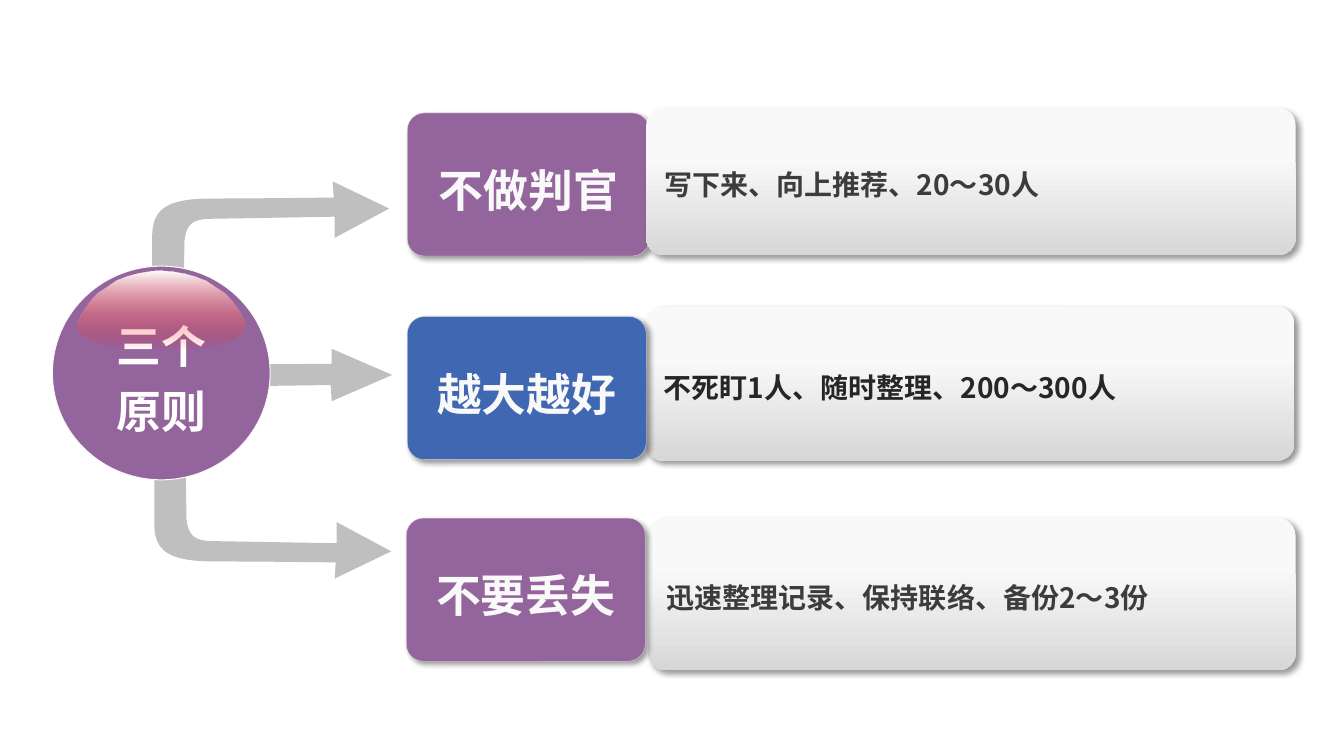
import pptx
import pptx.dml.color
import pptx.enum.shapes
import pptx.enum.text
import pptx.oxml
import pptx.oxml.ns
import pptx.util
from pptx.util import Inches

COLORS = {
    "purple": "94659C", "blue": "4067B2", "arrow": "BFBFBF", "light": "F9F9F9",
    "edge": "D7D7D7", "dark": "262626", "gray": "3C3C3C", "white": "FFFFFF", "red": "FF0000",
}
CJK_FONT = "Noto Sans CJK SC"
SHAPES = pptx.enum.shapes.MSO_SHAPE
ALIGN = pptx.enum.text.PP_ALIGN

# Outlines in inches from the left top of their box; six numbers make a curve.
BENT_ARROW = [
    (0.30, 1.82), (0.32, 0.59), (0.34, 0.37, 0.46, 0.37, 0.67, 0.37),
    (1.81, 0.35), (1.81, 0.56), (2.35, 0.27), (1.79, 0), (1.80, 0.16),
    (1.80, 0.16, 1.02, 0.17, 0.59, 0.17), (0.15, 0.17, 0.01, 0.27, 0, 0.52),
    (0, 1.84), (0.05, 2.06, 0.24, 2.03, 0.30, 1.82),
]
STRAIGHT_ARROW = [(0, 0.39), (2.18, 0.36), (2.19, 0.52), (2.79, 0.26),
                  (2.19, 0), (2.19, 0.15), (0, 0.16)]
# Right half of the gloss, from its top centre to its bottom.
GLOSS_HALF = [
    (0, 0), (0.12, 0.01), (0.23, 0.03), (0.34, 0.06), (0.44, 0.10), (0.53, 0.16),
    (0.62, 0.22), (0.69, 0.29), (0.75, 0.37), (0.80, 0.45), (0.83, 0.53), (0.83, 0.58),
    (0.80, 0.63), (0.72, 0.69), (0.60, 0.74), (0.46, 0.77), (0.30, 0.79), (0.16, 0.80),
]


def rgb(name):
    return pptx.dml.color.RGBColor.from_string(COLORS[name])


def fill_solid(shape, color):
    shape.fill.solid()
    shape.fill.fore_color.rgb = rgb(color)


def fill_gradient(shape, *stops):
    """Fill from top to bottom with two (position, color) stops."""
    shape.fill.gradient()
    shape.fill.gradient_angle = 270
    for stop, (position, color) in zip(shape.fill.gradient_stops, stops):
        stop.position = position
        stop.color.rgb = rgb(color)


def set_line(shape, color=None, width=0.25):
    if color is None:
        shape.line.fill.background()
    else:
        shape.line.color.rgb = rgb(color)
        shape.line.width = pptx.util.Pt(width)


def add_shadow(shape):
    namespace = pptx.oxml.ns.nsdecls("a")
    effects = shape._element.spPr.find(pptx.oxml.ns.qn("a:effectLst"))
    effects.append(pptx.oxml.parse_xml(
        f'<a:outerShdw {namespace} blurRad="50800" dist="38100" dir="2700000" algn="tl" '
        'rotWithShape="0"><a:srgbClr val="000000"><a:alpha val="40000"/></a:srgbClr>'
        '</a:outerShdw>'))


def set_text(shape, text, size=32, color="light", font=CJK_FONT, align=ALIGN.CENTER, inset=0.14):
    frame = shape.text_frame
    frame.word_wrap = True
    frame.vertical_anchor = pptx.enum.text.MSO_ANCHOR.MIDDLE
    frame.margin_left = frame.margin_right = Inches(inset)
    frame.margin_top = frame.margin_bottom = Inches(0.07)
    paragraph = frame.paragraphs[0]
    paragraph.alignment = align
    paragraph.line_spacing = 1.2
    run = paragraph.add_run()
    run.text = text
    run.font.size = pptx.util.Pt(size)
    run.font.bold = True
    run.font.name = font
    run.font.color.rgb = rgb(color)
    east_asian = run._r.get_or_add_rPr().makeelement(
        pptx.oxml.ns.qn("a:ea"), {"typeface": CJK_FONT})
    run._r.rPr.find(pptx.oxml.ns.qn("a:latin")).addnext(east_asian)


def flatten(outline, steps=12):
    """Turn the curves of an outline into short straight steps."""
    points = []
    for entry in outline:
        if len(entry) == 2:
            points.append(entry)
            continue
        controls = [points[-1], entry[:2], entry[2:4], entry[4:]]
        for step in range(1, steps + 1):
            t = step / steps
            weights = ((1 - t) ** 3, 3 * t * (1 - t) ** 2, 3 * t * t * (1 - t), t ** 3)
            points.append(tuple(sum(w * c[axis] for w, c in zip(weights, controls))
                                for axis in (0, 1)))
    return points


def add_outline(shapes, left, top, points):
    placed = [(Inches(left + x), Inches(top + y)) for x, y in points]
    builder = shapes.build_freeform(*placed[0])
    builder.add_line_segments(placed[1:], close=True)
    shape = builder.convert_to_shape()
    shape.shadow.inherit = False
    set_line(shape)
    return shape


def add_arrow(slide, left, top, outline, flip_height=None):
    """Draw an arrow, turned upside down when flip_height is given."""
    points = flatten(outline)
    if flip_height is not None:
        points = [(x, flip_height - y) for x, y in points]
    fill_solid(add_outline(slide.shapes, left, top, points), "arrow")


def add_rounded(slide, box, radius):
    shape = slide.shapes.add_shape(SHAPES.ROUNDED_RECTANGLE, *map(Inches, box))
    shape.adjustments[0] = radius
    shape.shadow.inherit = False
    add_shadow(shape)
    return shape


def add_panel(slide, box, text, color):
    panel = add_rounded(slide, box, 0.115)
    fill_gradient(panel, (0.33, "light"), (1, "edge"))
    set_line(panel)
    set_text(panel, text, size=20, color=color, align=ALIGN.LEFT, inset=0.13)


def add_tag(slide, box, text, color):
    tag = add_rounded(slide, box, 0.119)
    fill_solid(tag, color)
    set_line(tag, "edge")
    set_text(tag, text)


def add_hub(slide, left, top, width, height, text):
    """Draw the glossy circle that the arrows leave from."""
    shapes = slide.shapes.add_group_shape().shapes
    circle = shapes.add_shape(SHAPES.OVAL, *map(Inches, (left, top, width, height)))
    circle.shadow.inherit = False
    fill_solid(circle, "purple")
    set_line(circle, "light", 0.75)
    set_text(circle, text, color="white", font="Arial", inset=0.1)

    mirrored = [(-x, y) for x, y in reversed(GLOSS_HALF[1:])]
    gloss = add_outline(shapes, left + width / 2, top + 0.04, GLOSS_HALF + mirrored)
    fill_gradient(gloss, (0, "white"), (1, "red"))
    last_color = gloss._element.spPr.findall(".//" + pptx.oxml.ns.qn("a:srgbClr"))[-1]
    last_color.append(last_color.makeelement(pptx.oxml.ns.qn("a:alpha"), {"val": "0"}))


def main():
    presentation = pptx.Presentation()
    presentation.slide_width = Inches(13.33)
    presentation.slide_height = Inches(7.5)
    slide = presentation.slides.add_slide(presentation.slide_layouts[6])

    add_arrow(slide, 1.53, 3.69, BENT_ARROW, flip_height=2.05)
    add_arrow(slide, 1.1, 3.46, STRAIGHT_ARROW)
    add_arrow(slide, 1.51, 1.8, BENT_ARROW)

    add_panel(slide, (6.4, 3.04, 6.44, 1.53), "不死盯1人、随时整理、200～300人", "dark")
    add_tag(slide, (4.04, 3.14, 2.37, 1.42), "越大越好", "blue")
    add_panel(slide, (6.43, 5.14, 6.42, 1.51), "迅速整理记录、保持联络、备份2～3份", "gray")
    add_tag(slide, (4.03, 5.14, 2.37, 1.42), "不要丢失", "purple")
    add_hub(slide, 0.52, 2.64, 2.16, 2.12, "三个原则")
    add_tag(slide, (4.04, 1.12, 2.4, 1.42), "不做判官", "purple")
    add_panel(slide, (6.41, 1.07, 6.44, 1.46), "写下来、向上推荐、20～30人", "gray")

    presentation.save("out.pptx")


if __name__ == "__main__":
    main()
